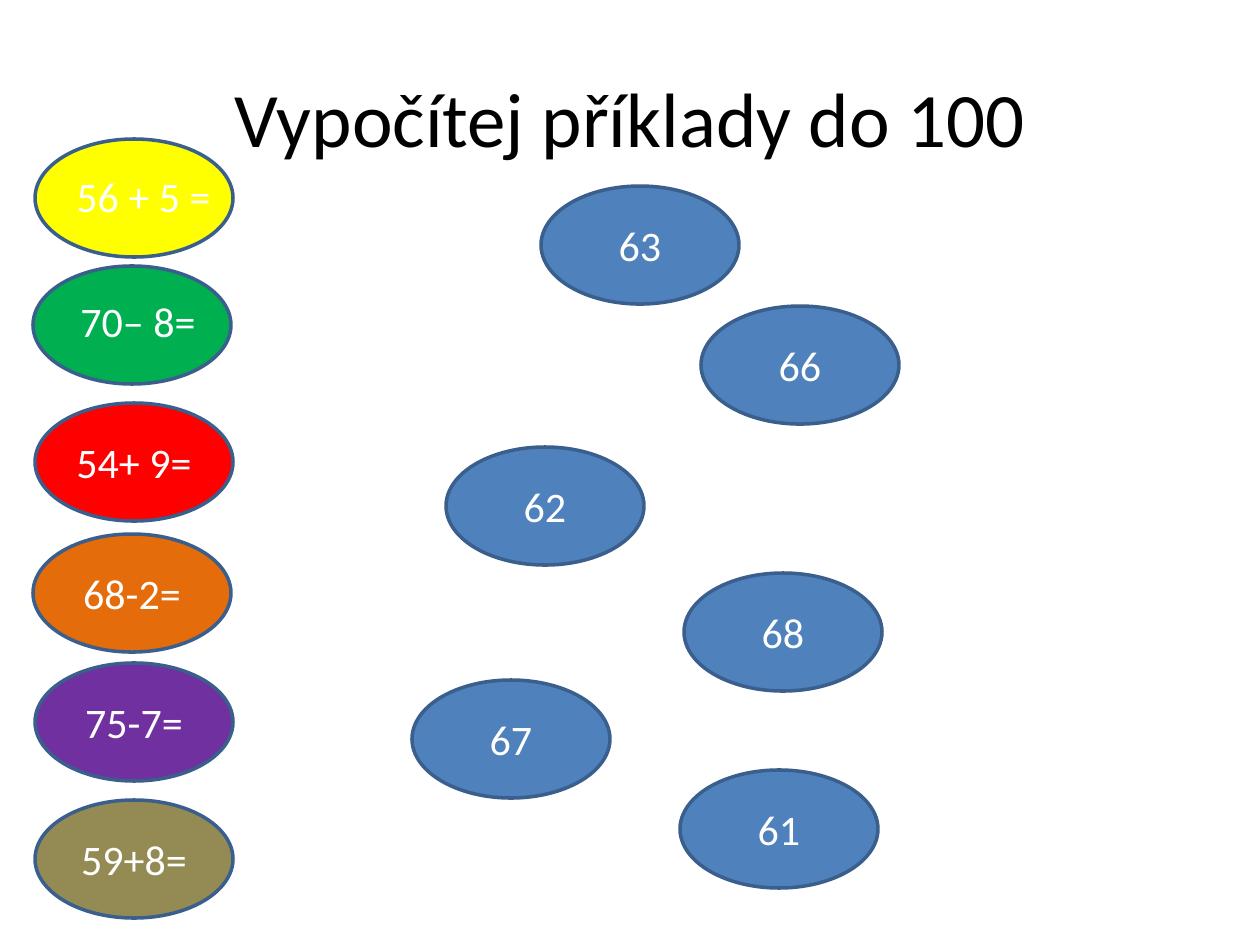
from dataclasses import dataclass

from pptx import Presentation
from pptx.dml.color import RGBColor
from pptx.enum.shapes import MSO_SHAPE
from pptx.enum.text import MSO_ANCHOR, MSO_AUTO_SIZE, PP_ALIGN
from pptx.util import Emu, Pt


@dataclass(frozen=True)
class Theme:
    """Hold the colours, font and sizes of the slide."""

    font: str = "Calibri"
    ink: str = "000000"
    light: str = "FFFFFF"
    edge: str = "3A5F8C"
    blue: str = "4F81BD"
    yellow: str = "FFFF00"
    green: str = "00B050"
    red: str = "FF0000"
    orange: str = "E46C0A"
    purple: str = "7030A0"
    olive: str = "948A54"
    head: int = 44
    body: int = 24
    line: int = 2


THEME = Theme()
SCALE = 914400 / 126
OVAL = (198, 118)
TASKS = [
    (35, 139, THEME.yellow, ""),
    (33, 266, THEME.green, ""),
    (35, 403, THEME.red, "54+ 9="),
    (33, 534, THEME.orange, "68-2="),
    (35, 663, THEME.purple, "75-7="),
    (35, 800, THEME.olive, "59+8="),
]
LABELS = [
    ((64, 164, 238, 63), "56 + 5 ="),
    ((68, 289, 149, 63), "70– 8="),
]
SUMS = [
    (541, 186, "63"),
    (701, 306, "66"),
    (446, 447, "62"),
    (684, 573, "68"),
    (412, 680, "67"),
    (680, 770, "61"),
]


def px(*nums):
    """Turn pixel lengths into EMU."""
    return [Emu(round(num * SCALE)) for num in nums]


def write(frame, text, size=THEME.body, color=THEME.light,
          align=PP_ALIGN.CENTER, anchor=MSO_ANCHOR.MIDDLE):
    """Put formatted text into a text frame."""
    frame.word_wrap = True
    frame.vertical_anchor = anchor
    para = frame.paragraphs[0]
    para.alignment = align
    run = para.add_run()
    run.text = text
    run.font.name = THEME.font
    run.font.size = Pt(size)
    run.font.color.rgb = RGBColor.from_string(color)


def add_oval(slide, left, top, fill, text):
    """Draw an outlined oval with an optional centred text."""
    oval = slide.shapes.add_shape(MSO_SHAPE.OVAL, *px(left, top, *OVAL))
    oval.shadow.inherit = False
    oval.fill.solid()
    oval.fill.fore_color.rgb = RGBColor.from_string(fill)
    oval.line.color.rgb = RGBColor.from_string(THEME.edge)
    oval.line.width = Pt(THEME.line)
    if text:
        write(oval.text_frame, text)


def add_label(slide, box, text, **style):
    """Add a text box and return its frame."""
    frame = slide.shapes.add_textbox(*px(*box)).text_frame
    write(frame, text, **style)
    return frame


def main():
    """Build and save the slide."""
    deck = Presentation()
    deck.slide_width, deck.slide_height = px(1260, 945)
    slide = deck.slides.add_slide(deck.slide_layouts[6])
    add_label(slide, (63, 38, 1134, 158), "Vypočítej příklady do 100",
              size=THEME.head, color=THEME.ink)
    for left, top, fill, text in TASKS:
        add_oval(slide, left, top, fill, text)
    for left, top, text in SUMS:
        add_oval(slide, left, top, THEME.blue, text)
    for box, text in LABELS:
        frame = add_label(slide, box, text, align=PP_ALIGN.LEFT,
                          anchor=MSO_ANCHOR.TOP)
        frame.auto_size = MSO_AUTO_SIZE.SHAPE_TO_FIT_TEXT
    deck.save("out.pptx")


if __name__ == "__main__":
    main()
